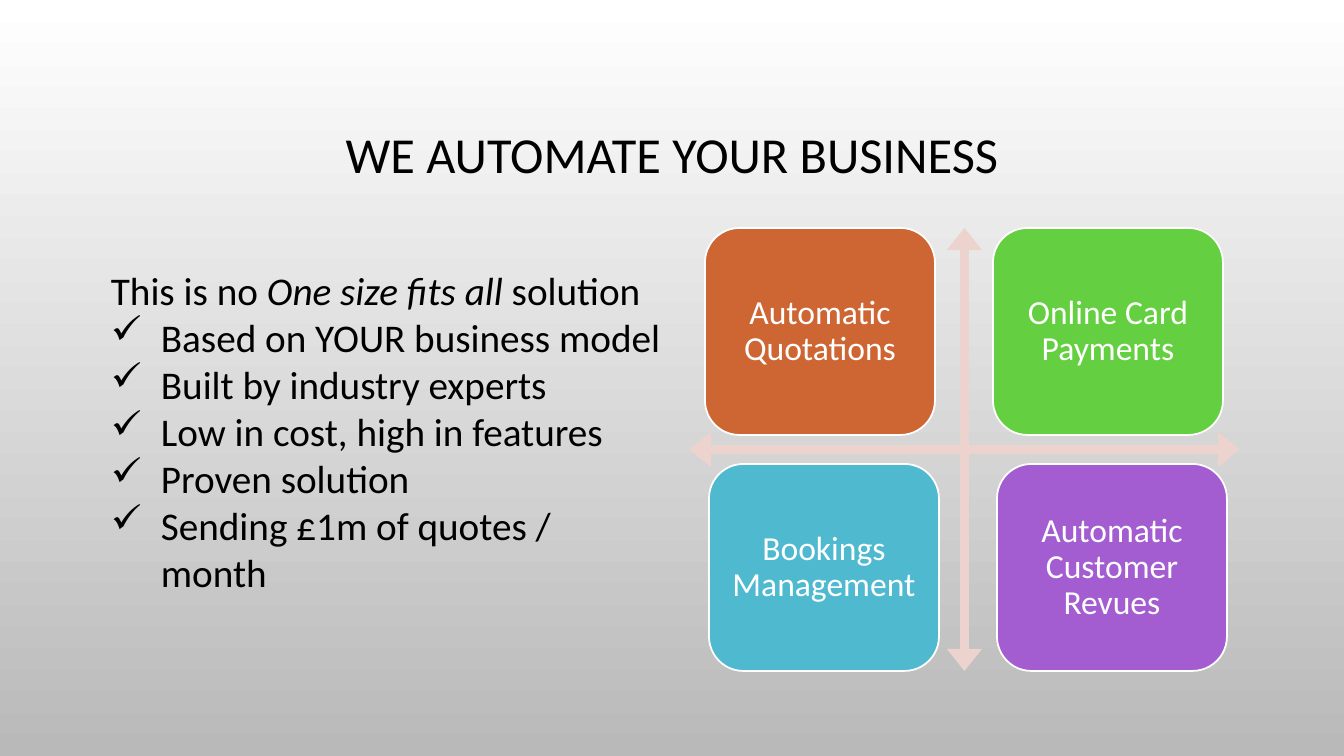
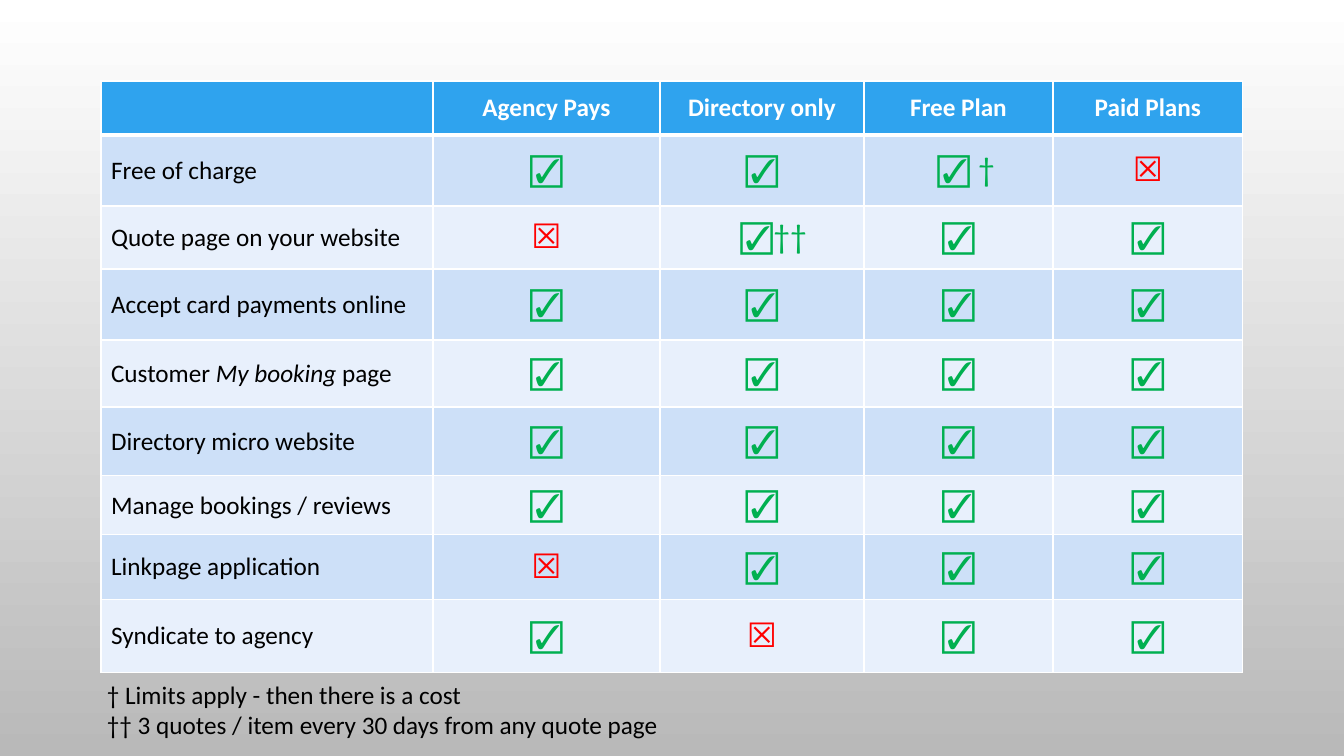
from itertools import product

from lxml.etree import SubElement
from pptx import Presentation
from pptx.dml.color import RGBColor
from pptx.enum.shapes import MSO_SHAPE
from pptx.enum.text import MSO_ANCHOR, PP_ALIGN
from pptx.oxml.ns import qn
from pptx.util import Emu, Pt

EMU_PER_PIXEL = 914400 / 100.8
FONT = "Calibri"
COLORS = {
    "text": "000000", "white": "FFFFFF", "background_end": "B9B9B9",
    "arrows": "EDD3CE", "orange": "CE6633", "green": "64CF41",
    "teal": "4FB9D0", "purple": "A35DD1",
    "header": "2FA3EE", "band_dark": "CDE0F8", "band_light": "E8F0FC",
    "yes": "00B050", "no": "FF0000",
}

BENEFITS = [
    "Based on YOUR business model",
    "Built by industry experts",
    "Low in cost, high in features",
    "Proven solution",
    "Sending £1m of quotes / month",
]
TILES = [
    ("Automatic Quotations", "orange"),
    ("Online Card Payments", "green"),
    ("Bookings Management", "teal"),
    ("Automatic Customer Revues", "purple"),
]
PLANS = ["", "Agency Pays", "Directory only", "Free Plan", "Paid Plans"]
# Each row: height, label runs (text, italic), one mark per plan
FEATURES = [
    (71, [("Free of charge", False)], ["☑", "☑", "☑ †", "☒"]),
    (63, [("Quote page on your website", False)], ["☒", "☑††", "☑", "☑"]),
    (71, [("Accept card payments online", False)], ["☑"] * 4),
    (67, [("Customer ", False), ("My booking ", True), ("page", False)], ["☑"] * 4),
    (69, [("Directory micro website", False)], ["☑"] * 4),
    (59, [("Manage bookings / reviews", False)], ["☑"] * 4),
    (65, [("Linkpage application", False)], ["☒", "☑", "☑", "☑"]),
    (73, [("Syndicate to agency", False)], ["☑", "☒", "☑", "☑"]),
]
COLUMN_WIDTHS = [332, 227, 204, 189, 190]
HEADER_HEIGHT = 54
MARK_MARGINS = {"☑ †": 25, "☑††": 33}
FOOTNOTES = [
    "† Limits apply - then there is a cost",
    "†† 3 quotes / item every 30 days from any quote page",
]


def px(value):
    return Emu(round(value * EMU_PER_PIXEL))


def rgb(name):
    return RGBColor.from_string(COLORS[name])


def add_run(paragraph, text, size, color="text", bold=False, italic=False):
    run = paragraph.add_run()
    run.text = text
    run.font.name = FONT
    run.font.size = Pt(size)
    run.font.bold = bold
    run.font.italic = italic
    run.font.color.rgb = rgb(color)


def add_text_box(slide, box, anchor=MSO_ANCHOR.TOP):
    frame = slide.shapes.add_textbox(*map(px, box)).text_frame
    frame.word_wrap = True
    frame.vertical_anchor = anchor
    return frame


def add_slide(presentation):
    """Blank slide with the shared vertical gradient."""
    slide = presentation.slides.add_slide(presentation.slide_layouts[6])
    fill = slide.background.fill
    fill.gradient()
    fill.gradient_angle = 270
    for stop, color in zip(fill.gradient_stops, ("white", "background_end")):
        stop.color.rgb = rgb(color)
    return slide


def add_title(slide, box, text):
    paragraph = add_text_box(slide, box, MSO_ANCHOR.MIDDLE).paragraphs[0]
    paragraph.alignment = PP_ALIGN.CENTER
    paragraph.line_spacing = 0.9
    add_run(paragraph, text, 36)


def add_benefits(slide, box):
    frame = add_text_box(slide, box)
    introduction = frame.paragraphs[0]
    add_run(introduction, "This is no ", 28)
    add_run(introduction, "One size fits all", 28, italic=True)
    add_run(introduction, " solution", 28)
    for benefit in BENEFITS:
        paragraph = frame.add_paragraph()
        properties = paragraph._p.get_or_add_pPr()
        properties.set("marL", str(px(50)))
        properties.set("indent", str(-px(50)))
        SubElement(properties, qn("a:buChar")).set("char", "✓")
        add_run(paragraph, benefit, 28)


def add_preset(slide, preset, box, color):
    shape = slide.shapes.add_shape(preset, *map(px, box))
    shape.shadow.inherit = False
    shape.fill.solid()
    shape.fill.fore_color.rgb = rgb(color)
    return shape


def add_matrix(slide, box):
    """Four tiles around a crossed pair of arrows."""
    left, top, width, height = box
    arrows = add_preset(slide, MSO_SHAPE.QUAD_ARROW, box, "arrows")
    arrows.line.fill.background()
    for index, value in enumerate((0.02, 0.04, 0.05)):
        arrows.adjustments[index] = value

    tile_width, tile_height = 230, 207
    for (row, column), (text, color) in zip(product(range(2), repeat=2), TILES):
        tile_box = (left + 16 + 288 * column + 4 * row,
                    top + (height - tile_height) * row, tile_width, tile_height)
        tile = add_preset(slide, MSO_SHAPE.ROUNDED_RECTANGLE, tile_box, color)
        tile.line.color.rgb = rgb("white")
        tile.line.width = Pt(1.25)
        frame = tile.text_frame
        frame.word_wrap = True
        frame.vertical_anchor = MSO_ANCHOR.MIDDLE
        frame.margin_left = frame.margin_right = px(10)
        frame.margin_top = frame.margin_bottom = px(10)
        paragraph = frame.paragraphs[0]
        paragraph.alignment = PP_ALIGN.CENTER
        paragraph.line_spacing = 0.9
        add_run(paragraph, text, 24, "white")


def style_cell(cell, color, top_width=1, bottom_width=1):
    """White borders, then the fill, with the text centred vertically."""
    cell.vertical_anchor = MSO_ANCHOR.MIDDLE
    properties = cell._tc.get_or_add_tcPr()
    for side, width in (("L", 1), ("R", 1), ("T", top_width), ("B", bottom_width)):
        line = SubElement(properties, qn(f"a:ln{side}"), w=str(Pt(width)))
        fill = SubElement(line, qn("a:solidFill"))
        SubElement(fill, qn("a:srgbClr"), val=COLORS["white"])
    cell.fill.solid()
    cell.fill.fore_color.rgb = rgb(color)


def add_plan_table(slide, left, top):
    heights = [HEADER_HEIGHT] + [height for height, _, _ in FEATURES]
    table = slide.shapes.add_table(
        len(heights), len(PLANS), px(left), px(top),
        px(sum(COLUMN_WIDTHS)), px(sum(heights))).table
    table.first_row = table.horz_banding = False
    for column, width in zip(table.columns, COLUMN_WIDTHS):
        column.width = px(width)
    for row, height in zip(table.rows, heights):
        row.height = px(height)

    # Header row
    for column, plan in enumerate(PLANS):
        cell = table.cell(0, column)
        style_cell(cell, "header", bottom_width=3)
        if plan:
            paragraph = cell.text_frame.paragraphs[0]
            paragraph.alignment = PP_ALIGN.CENTER
            add_run(paragraph, plan, 18, "white", bold=True)

    # Feature rows
    for row, (_, label, marks) in enumerate(FEATURES, start=1):
        band = "band_dark" if row % 2 else "band_light"
        for column in range(len(PLANS)):
            style_cell(table.cell(row, column), band, top_width=3 if row == 1 else 1)
        for text, italic in label:
            add_run(table.cell(row, 0).text_frame.paragraphs[0], text, 18, italic=italic)
        for column, mark in enumerate(marks, start=1):
            cell = table.cell(row, column)
            cell.margin_left = px(MARK_MARGINS.get(mark, 10))
            paragraph = cell.text_frame.paragraphs[0]
            paragraph.alignment = PP_ALIGN.CENTER
            add_run(paragraph, mark, 24, "no" if mark == "☒" else "yes")


def add_footnotes(slide, box):
    frame = add_text_box(slide, box)
    for index, note in enumerate(FOOTNOTES):
        paragraph = frame.add_paragraph() if index else frame.paragraphs[0]
        add_run(paragraph, note, 18)


def build_automation_slide(presentation):
    slide = add_slide(presentation)
    add_title(slide, (101, 69, 1142, 176), "WE AUTOMATE YOUR BUSINESS")
    add_matrix(slide, (689, 228, 551, 443))
    add_benefits(slide, (101, 261, 572, 373))


def build_plans_slide(presentation):
    slide = add_slide(presentation)
    add_plan_table(slide, 101, 81)
    add_footnotes(slide, (97, 674, 625, 72))


def main():
    presentation = Presentation()
    presentation.slide_width = px(1344)
    presentation.slide_height = px(756)
    build_automation_slide(presentation)
    build_plans_slide(presentation)
    presentation.save("out.pptx")


if __name__ == "__main__":
    main()
